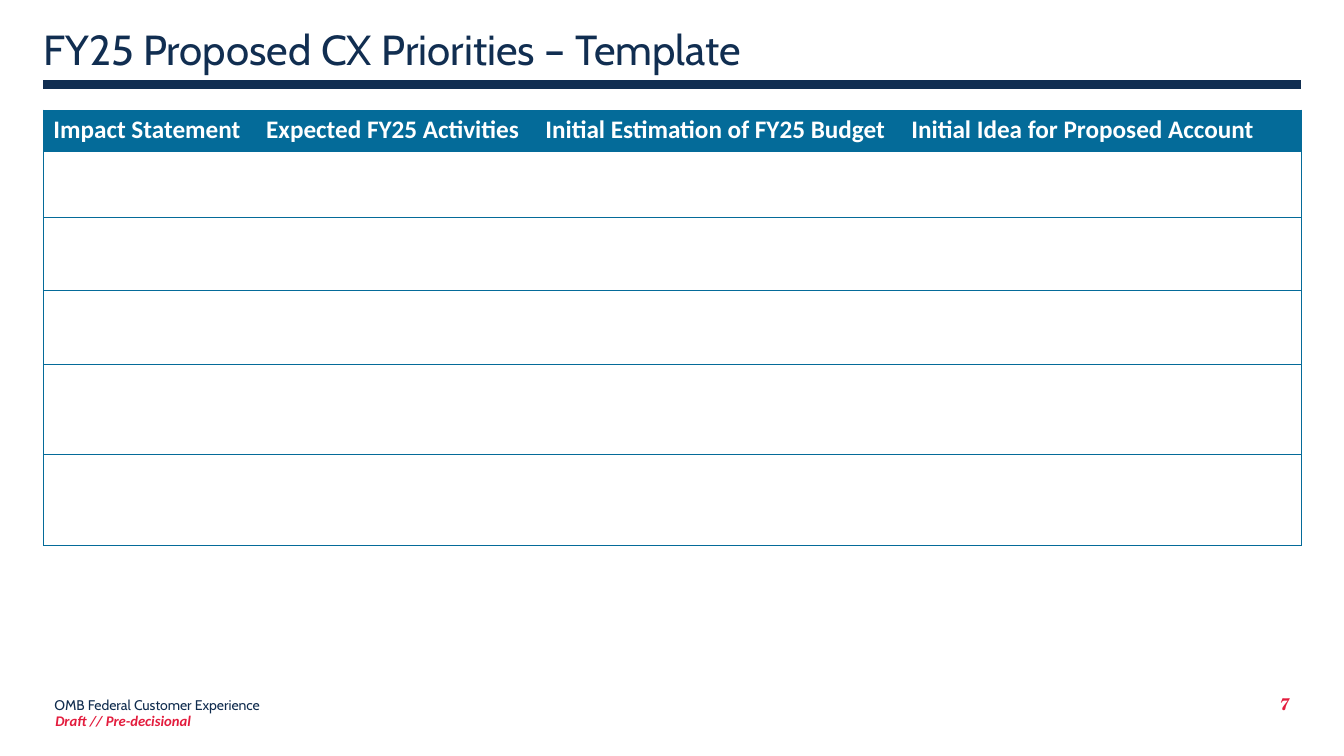
from dataclasses import dataclass, field
from typing import Any

from lxml import etree
from pptx import Presentation
from pptx import util as u
from pptx.dml.color import RGBColor
from pptx.enum import shapes, text
from pptx.oxml import ns

NAVY = RGBColor(0x11, 0x2E, 0x51)
FOOTER_NAVY = RGBColor(0x10, 0x2C, 0x4E)
BLUE = RGBColor(0x04, 0x6B, 0x99)
RED = RGBColor(0xE3, 0x1C, 0x3D)
WHITE = RGBColor(0xFF, 0xFF, 0xFF)

MARGIN = 0.43
RULE_TOP = 0.84
TABLE_TOP = 1.09
HEADINGS = (
    "Impact Statement",
    "Expected FY25 Activities",
    "Initial Estimation of FY25 Budget",
    "Initial Idea for Proposed Account",
)
COLUMN_WIDTHS = (2.11, 2.77, 3.63, 3.97)
ROW_HEIGHTS = (0.41, 0.66, 0.72, 0.73, 0.9, 0.9)


@dataclass(frozen=True)
class Label:
    wording: str
    box: tuple[float, float, float, float]
    font: dict[str, Any]
    color: RGBColor
    insets: tuple[float, float, float, float] = (0, 0, 0, 0)
    anchor: text.MSO_ANCHOR = text.MSO_ANCHOR.BOTTOM
    paragraph: dict[str, Any] = field(default_factory=dict)


LABELS = (
    Label("OMB Federal Customer Experience", (0.54, 6.72, 3.56, 0.36),
          {"name": "Cabin", "size": u.Pt(10)}, FOOTER_NAVY),
    Label("Draft // Pre-decisional", (0.45, 7.01, 2.18, 0.29),
          {"name": "Calibri", "size": u.Pt(10.5), "bold": True, "italic": True},
          RED, (0.1, 0.05, 0.1, 0.05), text.MSO_ANCHOR.TOP),
    Label("7", (9.79, 6.85, 3, 0.23),
          {"name": "TeX Gyre Schola", "size": u.Pt(12), "bold": True, "italic": True},
          RED, paragraph={"alignment": text.PP_ALIGN.RIGHT}),
    Label("FY25 Proposed CX Priorities – Template", (MARGIN, -0.26, 9.05, 1.1),
          {"name": "Cabin", "size": u.Pt(30)}, NAVY, (0, 0, 0, 0.1),
          paragraph={"line_spacing": 0.9, "space_before": u.Pt(10)}),
)


def apply_format(target: Any, values: dict[str, Any]) -> None:
    for name, value in values.items():
        setattr(target, name, value)


def write(paragraph: Any, wording: str, font: dict[str, Any], color: RGBColor) -> None:
    run = paragraph.add_run()
    run.text = wording
    apply_format(run.font, font)
    run.font.color.rgb = color


def draw_label(slide: Any, label: Label) -> None:
    frame = slide.shapes.add_textbox(*map(u.Inches, label.box)).text_frame
    sides = ("margin_left", "margin_top", "margin_right", "margin_bottom")
    apply_format(frame, dict(zip(sides, map(u.Inches, label.insets))))
    apply_format(frame, {"word_wrap": True, "vertical_anchor": label.anchor})
    paragraph = frame.paragraphs[0]
    apply_format(paragraph, label.paragraph)
    write(paragraph, label.wording, label.font, label.color)


def draw_title_rule(slide: Any) -> None:
    rule = slide.shapes.add_connector(
        shapes.MSO_CONNECTOR.STRAIGHT,
        u.Inches(MARGIN), u.Inches(RULE_TOP), u.Inches(12.9), u.Inches(RULE_TOP),
    )
    rule.line.color.rgb = NAVY
    rule.line.width = u.Pt(6)
    etree.SubElement(rule._element.spPr, ns.qn("a:effectLst"))


def set_borders(cell: Any, visible: dict[str, bool]) -> None:
    properties = cell._tc.get_or_add_tcPr()
    for side, shown in visible.items():
        border = etree.SubElement(properties, ns.qn(f"a:ln{side}"), w=str(u.Pt(0.5)))
        if shown:
            fill = etree.SubElement(border, ns.qn("a:solidFill"))
            etree.SubElement(fill, ns.qn("a:srgbClr"), val=str(BLUE))
        else:
            etree.SubElement(border, ns.qn("a:noFill"))


def draw_priorities(slide: Any) -> None:
    priorities = slide.shapes.add_table(
        len(ROW_HEIGHTS), len(COLUMN_WIDTHS),
        u.Inches(MARGIN), u.Inches(TABLE_TOP),
        u.Inches(sum(COLUMN_WIDTHS)), u.Inches(sum(ROW_HEIGHTS)),
    ).table
    priorities.horz_banding = False
    for column, width in zip(priorities.columns, COLUMN_WIDTHS):
        column.width = u.Inches(width)
    for row_index, (row, height) in enumerate(zip(priorities.rows, ROW_HEIGHTS)):
        row.height = u.Inches(height)
        for column_index, cell in enumerate(row.cells):
            set_borders(cell, {
                "L": column_index == 0,
                "R": column_index == len(COLUMN_WIDTHS) - 1,
                "T": True,
                "B": True,
            })
            cell.fill.solid()
            cell.fill.fore_color.rgb = WHITE if row_index else BLUE
    heading_font = {"name": "Calibri", "size": u.Pt(18), "bold": True}
    for cell, heading in zip(priorities.rows[0].cells, HEADINGS):
        write(cell.text_frame.paragraphs[0], heading, heading_font, WHITE)


def main() -> None:
    deck = Presentation()
    apply_format(deck, {"slide_width": u.Inches(13.33), "slide_height": u.Inches(7.5)})
    slide = deck.slides.add_slide(deck.slide_layouts[6])
    draw_title_rule(slide)
    for label in LABELS:
        draw_label(slide, label)
    draw_priorities(slide)
    deck.save("out.pptx")


if __name__ == "__main__":
    main()
